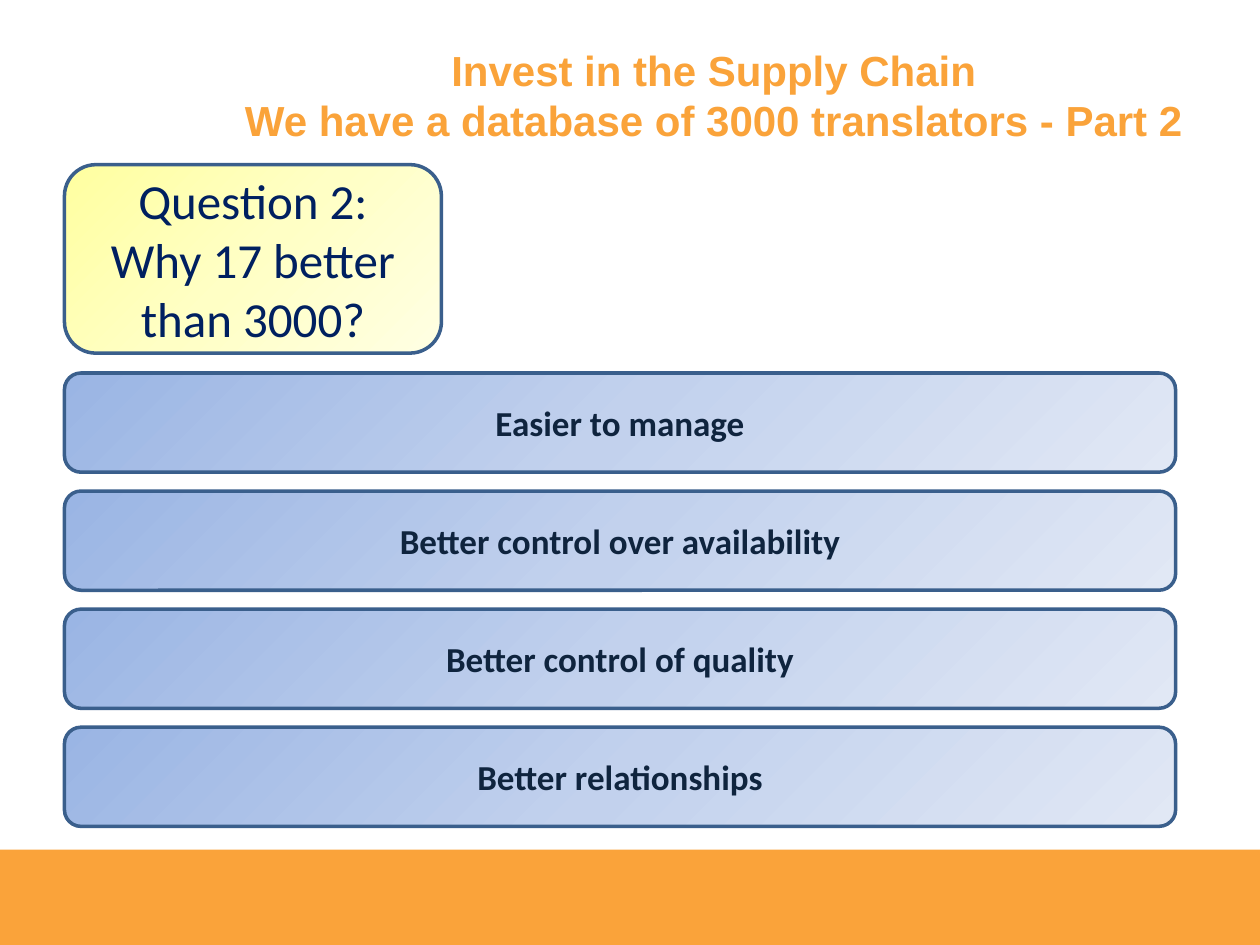
from copy import deepcopy
from dataclasses import dataclass

from pptx import Presentation
from pptx.dml.color import RGBColor
from pptx.enum.shapes import MSO_SHAPE
from pptx.enum.text import MSO_ANCHOR, PP_ALIGN
from pptx.oxml.ns import qn
from pptx.util import Cm, Pt

RECTANGLE = MSO_SHAPE.RECTANGLE
ROUNDED = MSO_SHAPE.ROUNDED_RECTANGLE
MIDDLE = MSO_ANCHOR.MIDDLE
CENTER = PP_ALIGN.CENTER


@dataclass(frozen=True)
class Theme:
    orange: str = "FAA33A"
    outline: str = "3A5F8C"
    question_text: str = "002060"
    reason_text: str = "0F243E"
    yellows: tuple[str, ...] = ("FFFFA0", "FFFFC5", "FFFFE3")
    blues: tuple[str, ...] = ("9AB5E4", "C2D1ED", "E1E8F5")
    heading_font: str = "Arial"
    body_font: str = "Calibri"
    title_size: int = 24
    question_size: int = 28
    reason_size: int = 20
    outline_width: int = 2


@dataclass(frozen=True)
class Panel:
    """A rounded box; lengths are in centimetres."""
    text: str
    top: float
    width: float
    height: float
    gradient: tuple[str, ...]
    color: str
    size: int
    bold: bool = False


THEME = Theme()
PANEL_LEFT = 1.3
REASON_TOP, REASON_PITCH = 7.52, 2.38
REASONS = (
    "Easier to manage",
    "Better control over availability",
    "Better control of quality",
    "Better relationships",
)


def write(shape, text: str, *, font: str, size: int, color: str,
          bold: bool = False) -> None:
    """Centre text in a shape: \\n starts a paragraph, \\v breaks a line."""
    frame = shape.text_frame
    frame.word_wrap = True
    frame.vertical_anchor = MIDDLE
    frame.text = text
    for paragraph in frame.paragraphs:
        paragraph.alignment = CENTER
        for run in paragraph.runs:
            run.font.name = font
            run.font.size = Pt(size)
            run.font.bold = bold
            run.font.color.rgb = RGBColor.from_string(color)


def fill_gradient(shape, colors: tuple[str, ...]) -> None:
    """Spread evenly spaced colours from top left to bottom right."""
    shape.fill.gradient()
    shape.fill.gradient_angle = 315
    stop_list = shape.fill._xPr.find(qn("a:gradFill")).find(qn("a:gsLst"))
    while len(stop_list) < len(colors):
        stop_list.append(deepcopy(stop_list[0]))
    for index, (stop, color) in enumerate(zip(shape.fill.gradient_stops, colors)):
        stop.position = index / (len(colors) - 1)
        stop.color.rgb = RGBColor.from_string(color)


def draw_panel(slide, panel: Panel) -> None:
    box = slide.shapes.add_shape(ROUNDED, Cm(PANEL_LEFT), Cm(panel.top),
                                 Cm(panel.width), Cm(panel.height))
    box.shadow.inherit = False
    fill_gradient(box, panel.gradient)
    box.line.color.rgb = RGBColor.from_string(THEME.outline)
    box.line.width = Pt(THEME.outline_width)
    write(box, panel.text, font=THEME.body_font, size=panel.size,
          color=panel.color, bold=panel.bold)


def main() -> None:
    deck = Presentation()
    deck.slide_width, deck.slide_height = Cm(25.4), Cm(19.05)
    slide = deck.slides.add_slide(deck.slide_layouts[6])

    # Footer band
    footer_top = Cm(17.13)
    footer = slide.shapes.add_shape(RECTANGLE, 0, footer_top, deck.slide_width,
                                    deck.slide_height - footer_top)
    footer.shadow.inherit = False
    footer.fill.solid()
    footer.fill.fore_color.rgb = RGBColor.from_string(THEME.orange)
    footer.line.fill.background()

    # Title
    title = slide.shapes.add_textbox(Cm(4.65), Cm(0.61), Cm(19.48), Cm(2.6))
    title.text_frame.margin_left = title.text_frame.margin_right = 0
    write(title, "Invest in the Supply Chain\v"
                 "We have a database of 3000 translators - Part 2",
          font=THEME.heading_font, size=THEME.title_size,
          color=THEME.orange, bold=True)

    # Question
    draw_panel(slide, Panel("Question 2:\nWhy 17 better than 3000?", 3.32, 7.6, 3.8,
                            THEME.yellows, THEME.question_text,
                            THEME.question_size))

    # Reasons
    for row, reason in enumerate(REASONS):
        draw_panel(slide, Panel(reason, REASON_TOP + row * REASON_PITCH, 22.4, 2,
                                THEME.blues, THEME.reason_text,
                                THEME.reason_size, bold=True))

    deck.save("out.pptx")


if __name__ == "__main__":
    main()
